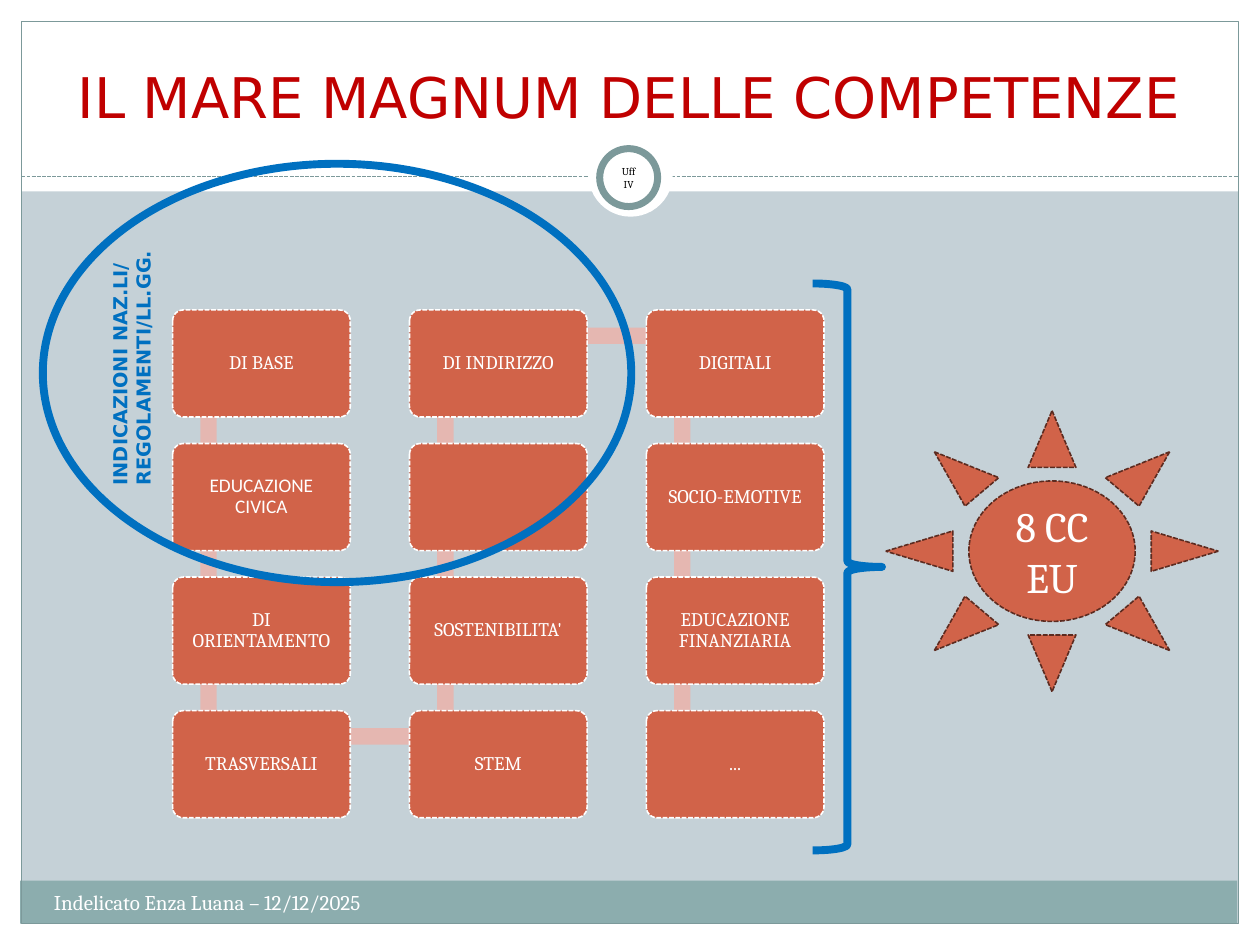
"""Build the slide on the wide sea of school competences."""
from dataclasses import dataclass
from typing import Optional

from lxml import etree
from pptx import Presentation
from pptx.dml.color import RGBColor
from pptx.enum import dml, shapes, text
from pptx.oxml import ns
from pptx.util import Inches, Pt

WHITE = RGBColor(0xFF, 0xFF, 0xFF)
BLACK = RGBColor(0, 0, 0)
MIST = RGBColor(0xC5, 0xD1, 0xD7)
TEAL = RGBColor(0x8C, 0xAD, 0xAE)
SLATE = RGBColor(0x7C, 0x99, 0x9A)
RUST = RGBColor(0xD1, 0x63, 0x49)
BROWN = RGBColor(0x5C, 0x2B, 0x20)
PINK = RGBColor(0xE5, 0xB7, 0xB1)
RED = RGBColor(0xC0, 0, 0)
BLUE = RGBColor(0, 0x70, 0xC0)

KIND = shapes.MSO_SHAPE
MID = text.MSO_ANCHOR.MIDDLE
CENTER = text.PP_ALIGN.CENTER
LEFT = text.PP_ALIGN.LEFT


@dataclass
class Box:
    x: float
    y: float
    w: float
    h: float

    def spans(self):
        return [Inches(v) for v in (self.x, self.y, self.w, self.h)]


@dataclass
class Pen:
    color: RGBColor
    width: float
    dashed: bool = False


@dataclass
class Label:
    words: str
    size: float
    color: RGBColor
    font: str = "Cambria"
    align: text.PP_ALIGN = CENTER
    anchor: text.MSO_ANCHOR = MID
    inset: float = 0.1
    bold: bool = False
    space: float = 1.0


@dataclass
class Card:
    words: str
    font: str = "Cambria"


CARDS = [
    [Card("DI BASE"), Card("EDUCAZIONE CIVICA", "Calibri"), Card("DI ORIENTAMENTO"), Card("TRASVERSALI")],
    [Card("DI INDIRIZZO"), Card(""), Card("SOSTENIBILITA'"), Card("STEM")],
    [Card("DIGITALI"), Card("SOCIO-EMOTIVE"), Card("EDUCAZIONE FINANZIARIA"), Card("...")],
]
GRID = Box(1.37, 2.46, 1.41, 0.85)
STEP_X, STEP_Y = 1.88, 1.06
BAR = 0.13


def write(shape, label: Label) -> None:
    frame = shape.text_frame
    frame.word_wrap = True
    frame.vertical_anchor = label.anchor
    frame.margin_left = frame.margin_right = Inches(label.inset)
    frame.margin_top = frame.margin_bottom = Inches(min(label.inset, 0.05))
    para = frame.paragraphs[0]
    para.alignment = label.align
    para.line_spacing = label.space
    for index, line in enumerate(label.words.split("\n")):
        if index:
            para.add_line_break()
        run = para.add_run()
        run.text = line
        run.font.name = label.font
        run.font.size = Pt(label.size)
        run.font.bold = label.bold
        run.font.color.rgb = label.color


def ink(line, pen: Pen) -> None:
    line.color.rgb = pen.color
    line.width = Pt(pen.width)
    if pen.dashed:
        line.dash_style = dml.MSO_LINE.SQUARE_DOT


def draw(slide, kind: KIND, box: Box, fill: Optional[RGBColor] = None,
         pen: Optional[Pen] = None, label: Optional[Label] = None):
    shape = slide.shapes.add_shape(kind, *box.spans())
    shape.shadow.inherit = False
    if fill is None:
        shape.fill.background()
    else:
        shape.fill.solid()
        shape.fill.fore_color.rgb = fill
    if pen is None:
        shape.line.fill.background()
    else:
        ink(shape.line, pen)
    if label:
        write(shape, label)
    return shape


def note(slide, box: Box, label: Label, turn: float = 0) -> None:
    shape = slide.shapes.add_textbox(*box.spans())
    shape.rotation = turn
    write(shape, label)


def frame(slide) -> None:
    for box in (Box(0, 7.33, 10, 0.17), Box(0, 0, 10, 1.52),
                Box(0, 0, 0.17, 7.5), Box(9.83, 0, 0.17, 7.5)):
        draw(slide, KIND.RECTANGLE, box, WHITE)
    draw(slide, KIND.RECTANGLE, Box(0.16, 6.99, 9.66, 0.34), TEAL)
    draw(slide, KIND.RECTANGLE, Box(0.17, 0.17, 9.66, 7.16), pen=Pen(SLATE, 0.75))
    rule = slide.shapes.add_connector(
        shapes.MSO_CONNECTOR.STRAIGHT, Inches(0.17), Inches(1.4), Inches(9.83), Inches(1.4))
    ink(rule.line, Pen(SLATE, 0.75, True))
    etree.SubElement(rule._element.spPr, ns.qn("a:effectLst"))
    draw(slide, KIND.OVAL, Box(4.67, 1.05, 0.67, 0.67), WHITE)
    draw(slide, KIND.OVAL, Box(4.76, 1.18, 0.46, 0.46), WHITE, Pen(SLATE, 4),
         Label("Uff IV", 6, BLACK, inset=0.07))


def grid(slide) -> None:
    for col, cards in enumerate(CARDS):
        for row in range(len(cards) - 1):
            draw(slide, KIND.RECTANGLE,
                 Box(1.59 + col * STEP_X, 2.67 + row * STEP_Y, BAR, 1.05), PINK)
    for box in (Box(1.66, 5.78, 1.87, BAR), Box(3.54, 2.6, 1.87, BAR)):
        draw(slide, KIND.RECTANGLE, box, PINK)
    for col, cards in enumerate(CARDS):
        for row, card in enumerate(cards):
            box = Box(GRID.x + col * STEP_X, GRID.y + row * STEP_Y, GRID.w, GRID.h)
            label = Label(card.words, 11, WHITE, card.font, inset=0.07, space=0.9)
            shape = draw(slide, KIND.ROUNDED_RECTANGLE, box, RUST,
                         Pen(WHITE, 0.9, True), label if card.words else None)
            shape.adjustments[0] = 0.1


def main() -> None:
    deck = Presentation()
    deck.slide_width, deck.slide_height = Inches(10), Inches(7.5)
    slide = deck.slides.add_slide(deck.slide_layouts[6])
    slide.background.fill.solid()
    slide.background.fill.fore_color.rgb = MIST
    frame(slide)
    note(slide, Box(0.33, 0.25, 9.33, 0.83),
         Label("IL MARE MAGNUM DELLE COMPETENZE", 32, RED, "DejaVu Sans",
               anchor=text.MSO_ANCHOR.BOTTOM))
    note(slide, Box(0.33, 7.01, 3.11, 0.4),
         Label("Indelicato Enza Luana – 12/12/2025", 12, WHITE, align=LEFT,
               anchor=text.MSO_ANCHOR.TOP))
    grid(slide)
    draw(slide, KIND.OVAL, Box(0.34, 1.3, 4.67, 3.32), pen=Pen(BLUE, 4.5))
    note(slide, Box(-0.05, 2.62, 2.19, 0.47),
         Label("INDICAZIONI NAZ.LI/\nREGOLAMENTI/LL.GG.", 11, BLUE, "DejaVu Sans",
               LEFT, text.MSO_ANCHOR.TOP, bold=True), 270)
    draw(slide, KIND.SUN, Box(7.03, 3.26, 2.64, 2.23), RUST,
         Pen(BROWN, 0.9, True), Label("8 CC EU", 24, WHITE))
    draw(slide, KIND.RIGHT_BRACE, Box(6.45, 2.25, 0.55, 4.5), pen=Pen(BLUE, 4.5))
    deck.save("out.pptx")


if __name__ == "__main__":
    main()
